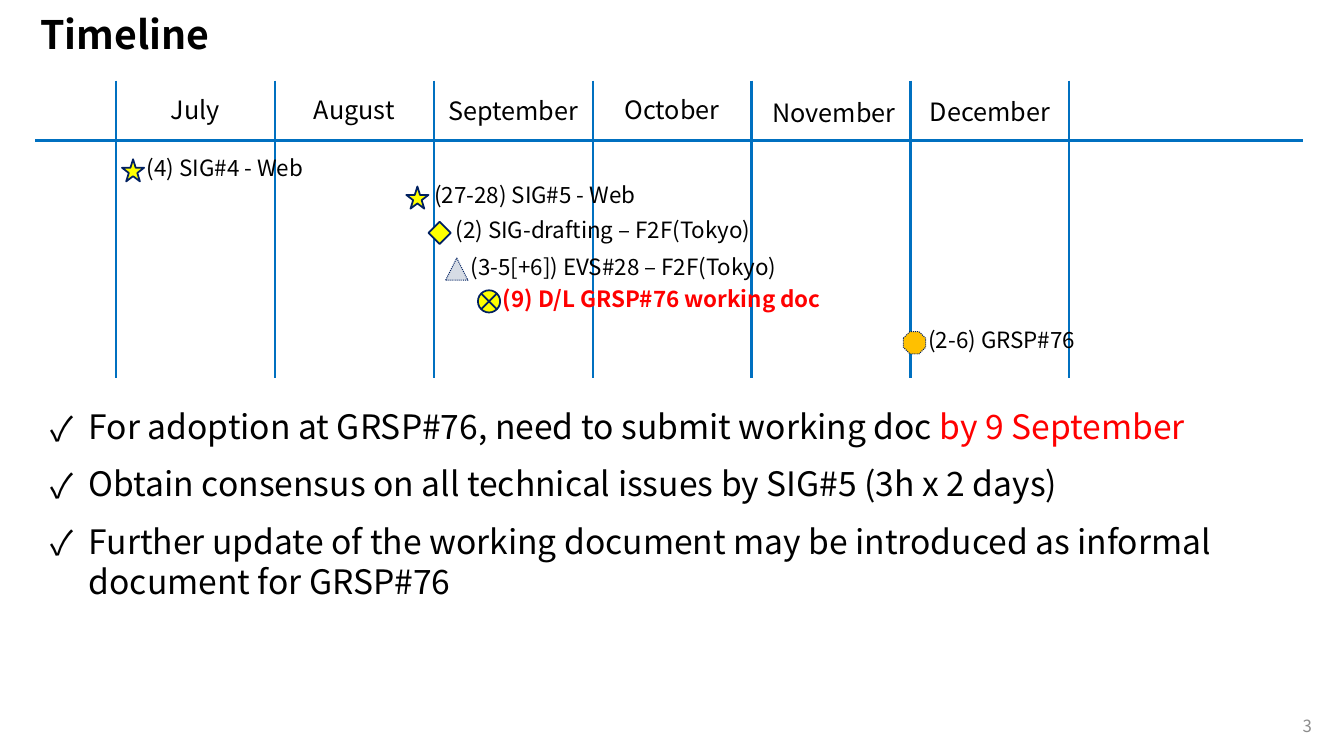
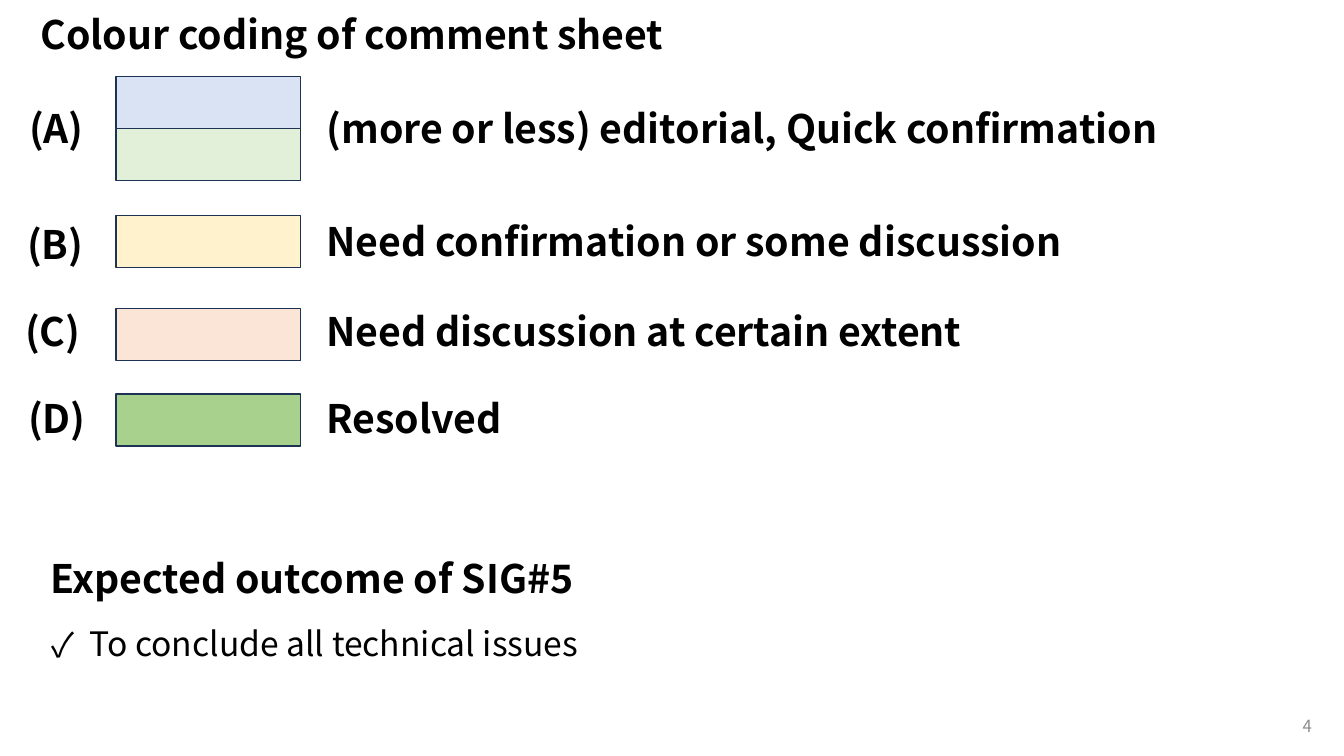
import pptx
import pptx.dml.color
import pptx.enum.dml
import pptx.enum.shapes
import pptx.enum.text
import pptx.oxml.ns
import pptx.util
from lxml import etree

# Shared look
FONT = "Noto Sans CJK JP"
BLACK, RED, GREY = "000000", "FF0000", "8C8C8C"
RULE_BLUE, NAVY, SWATCH_EDGE = "0070C0", "002060", "1E3256"
YELLOW, ORANGE, PALE_GREY = "FFFF00", "FFC000", "D6DCE5"
WIDTH, HEIGHT = 13.33, 7.5
HEADING_SIZE, HEADING_HEIGHT = 28, 0.57

SHAPE = pptx.enum.shapes.MSO_SHAPE
ALIGN = pptx.enum.text.PP_ALIGN
ANCHOR = pptx.enum.text.MSO_ANCHOR
INCH = pptx.util.Inches

# Timeline content
TIMELINE_TITLE = "Timeline"
# month, label top, sideways nudge from the column centre
MONTHS = [("July", 0.89, 0), ("August", 0.89, 0), ("September", 0.9, 0),
          ("October", 0.89, 0), ("November", 0.92, 0.03), ("December", 0.91, 0)]
MONTH_LEFT, MONTH_WIDTH = 1.15, 1.576
GRID_TOP, GRID_BOTTOM, AXIS_TOP = 0.8, 3.75, 1.39
AXIS_LEFT, AXIS_RIGHT = 0.35, 12.92
LABEL_WIDTH, MARKER = 1.67, 0.22
# marker, fill, dotted edge, marker left, marker top, label left, label, deadline
EVENTS = [
    (SHAPE.STAR_5_POINT, YELLOW, False, 1.21, 1.58, 1.36, "(4) SIG#4 - Web", False),
    (SHAPE.STAR_5_POINT, YELLOW, False, 4.03, 1.85, 4.21, "(27-28) SIG#5 - Web", False),
    (SHAPE.DIAMOND, YELLOW, False, 4.25, 2.2, 4.42, "(2) SIG-drafting – F2F(Tokyo)", False),
    (SHAPE.FLOWCHART_EXTRACT, PALE_GREY, True, 4.42, 2.56, 4.57,
     "(3-5[+6]) EVS#28 – F2F(Tokyo)", False),
    (SHAPE.FLOWCHART_SUMMING_JUNCTION, YELLOW, False, 4.74, 2.88, 4.89,
     "(9) D/L GRSP#76 working doc", True),
    (SHAPE.OCTAGON, ORANGE, True, 8.96, 3.29, 9.11, "(2-6) GRSP#76", False),
]
TIMELINE_POINTS = [
    [("For adoption at GRSP#76, need to submit working doc ", BLACK), ("by 9 September", RED)],
    [("Obtain consensus on all technical issues by SIG#5 (3h x 2 days)", BLACK)],
    [("Further update of the working document may be introduced as informal "
      "document for GRSP#76", BLACK)],
]

# Colour coding content
CODING_TITLE = "Colour coding of comment sheet"
# code, code left, code top, meaning, meaning top, first swatch top, swatch fills
CODES = [
    ("(A)", 0.19, 0.99, "(more or less) editorial, Quick confirmation", 0.99, 0.76,
     ["DAE3F3", "E2F0D9"]),
    ("(B)", 0.17, 2.14, "Need confirmation or some discussion", 2.11, 2.14, ["FFF2CC"]),
    ("(C)", 0.15, 3.0, "Need discussion at certain extent", 3.0, 3.06, ["FBE5D6"]),
    ("(D)", 0.18, 3.86, "Resolved", 3.86, 3.91, ["A9D18E"]),
]
SWATCH_LEFT, SWATCH_WIDTH, SWATCH_HEIGHT = 1.15, 1.83, 0.515
OUTCOME_HEADING = "Expected outcome of SIG#5"
OUTCOME_POINTS = [[("To conclude all technical issues", BLACK)]]


def rgb(value):
    return pptx.dml.color.RGBColor.from_string(value)


def place(shape, left, top, width, height):
    shape.left, shape.top = INCH(left), INCH(top)
    shape.width, shape.height = INCH(width), INCH(height)


def add_run(paragraph, text, size, colour=BLACK, bold=False):
    run = paragraph.add_run()
    run.text = text
    run.font.name = FONT
    run.font.size = pptx.util.Pt(size)
    run.font.bold = bold
    run.font.color.rgb = rgb(colour)


def prepare_frame(shape, anchor=ANCHOR.TOP):
    frame = shape.text_frame
    frame.word_wrap = True
    frame.vertical_anchor = anchor
    frame.auto_size = pptx.enum.text.MSO_AUTO_SIZE.SHAPE_TO_FIT_TEXT
    return frame


def add_label(slide, text, left, top, width, height, size, colour=BLACK, bold=False,
              align=ALIGN.LEFT, anchor=ANCHOR.TOP):
    box = slide.shapes.add_textbox(INCH(left), INCH(top), INCH(width), INCH(height))
    paragraph = prepare_frame(box, anchor).paragraphs[0]
    paragraph.alignment = align
    add_run(paragraph, text, size, colour, bold)


def add_heading(slide, text, left, top, width):
    add_label(slide, text, left, top, width, HEADING_HEIGHT, HEADING_SIZE, bold=True)


def add_line(slide, x1, y1, x2, y2, weight):
    line = slide.shapes.add_connector(pptx.enum.shapes.MSO_CONNECTOR.STRAIGHT,
                                      INCH(x1), INCH(y1), INCH(x2), INCH(y2))
    line.line.color.rgb = rgb(RULE_BLUE)
    line.line.width = pptx.util.Pt(weight)
    etree.SubElement(line.element.spPr, pptx.oxml.ns.qn("a:effectLst"))


def add_filled(slide, kind, left, top, width, height, fill, edge, weight, dotted=False):
    shape = slide.shapes.add_shape(kind, INCH(left), INCH(top), INCH(width), INCH(height))
    shape.shadow.inherit = False
    shape.fill.solid()
    shape.fill.fore_color.rgb = rgb(fill)
    shape.line.color.rgb = rgb(edge)
    shape.line.width = pptx.util.Pt(weight)
    if dotted:
        shape.line.dash_style = pptx.enum.dml.MSO_LINE.ROUND_DOT


def set_check_bullet(paragraph):
    properties = paragraph._p.get_or_add_pPr()
    properties.set("marL", str(INCH(0.39)))
    properties.set("indent", str(INCH(-0.38)))
    for tag, name, value in (("a:buFont", "typeface", FONT), ("a:buChar", "char", "✓")):
        etree.SubElement(properties, pptx.oxml.ns.qn(tag)).set(name, value)


def fill_body(slide, points, left, top, height):
    body = slide.placeholders[1]
    place(body, left, top, 12.53, height)
    frame = prepare_frame(body)
    for index, runs in enumerate(points):
        paragraph = frame.add_paragraph() if index else frame.paragraphs[0]
        paragraph.line_spacing = pptx.util.Pt(28.8)
        paragraph.space_before = pptx.util.Pt(0)
        paragraph.space_after = pptx.util.Pt(12)
        set_check_bullet(paragraph)
        for text, colour in runs:
            add_run(paragraph, text, 24, colour)


def new_slide(presentation, title, number):
    slide = presentation.slides.add_slide(presentation.slide_layouts[1])
    place(slide.shapes.title, 0.3, 0.05, 7.87, HEADING_HEIGHT)
    paragraph = prepare_frame(slide.shapes.title).paragraphs[0]
    paragraph.alignment = ALIGN.LEFT
    add_run(paragraph, title, HEADING_SIZE, bold=True)
    add_label(slide, str(number), 10.11, 7, 3, 0.4, 12, GREY,
              align=ALIGN.RIGHT, anchor=ANCHOR.MIDDLE)
    return slide


def build_timeline(presentation):
    slide = new_slide(presentation, TIMELINE_TITLE, 3)
    # Month grid
    add_line(slide, AXIS_LEFT, AXIS_TOP, AXIS_RIGHT, AXIS_TOP, 2.25)
    for column in range(len(MONTHS) + 1):
        x = MONTH_LEFT + column * MONTH_WIDTH
        add_line(slide, x, GRID_TOP, x, GRID_BOTTOM, 1.5)
    for column, (month, top, nudge) in enumerate(MONTHS):
        centre = MONTH_LEFT + (column + 0.5) * MONTH_WIDTH + nudge
        add_label(slide, month, centre - LABEL_WIDTH / 2, top, LABEL_WIDTH, 0.4, 18,
                  align=ALIGN.CENTER)
    # Events
    for kind, fill, dotted, left, top, label_left, label, deadline in EVENTS:
        add_filled(slide, kind, left, top, MARKER, MARKER, fill, NAVY,
                   0.75 if dotted else 1.25, dotted)
        add_label(slide, label, label_left, top - 0.1, 4, 0.37, 16,
                  RED if deadline else BLACK, deadline)
    fill_body(slide, TIMELINE_POINTS, 0.39, 3.98, 2.03)


def build_colour_coding(presentation):
    slide = new_slide(presentation, CODING_TITLE, 4)
    # Legend rows
    for code, code_left, code_top, meaning, meaning_top, swatch_top, fills in CODES:
        add_heading(slide, code, code_left, code_top, 0.97)
        for index, fill in enumerate(fills):
            add_filled(slide, SHAPE.RECTANGLE, SWATCH_LEFT, swatch_top + index * SWATCH_HEIGHT,
                       SWATCH_WIDTH, SWATCH_HEIGHT, fill, SWATCH_EDGE, 1)
        add_heading(slide, meaning, 3.14, meaning_top, 9.64)
    # Outcome
    add_heading(slide, OUTCOME_HEADING, 0.4, 5.45, 7.87)
    fill_body(slide, OUTCOME_POINTS, 0.4, 6.13, 0.47)


def main():
    presentation = pptx.Presentation()
    presentation.slide_width, presentation.slide_height = INCH(WIDTH), INCH(HEIGHT)
    build_timeline(presentation)
    build_colour_coding(presentation)
    presentation.save("out.pptx")


if __name__ == "__main__":
    main()
